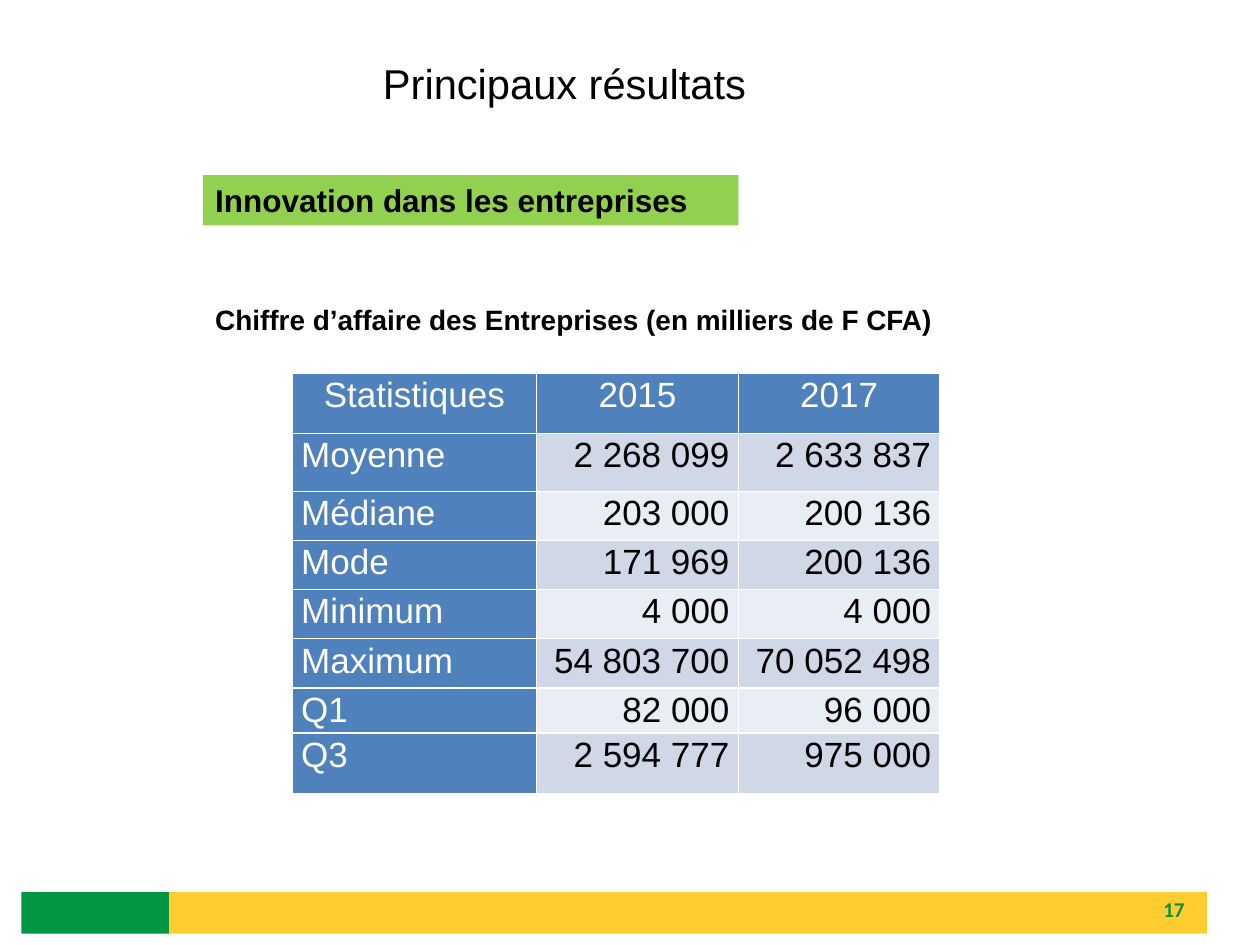
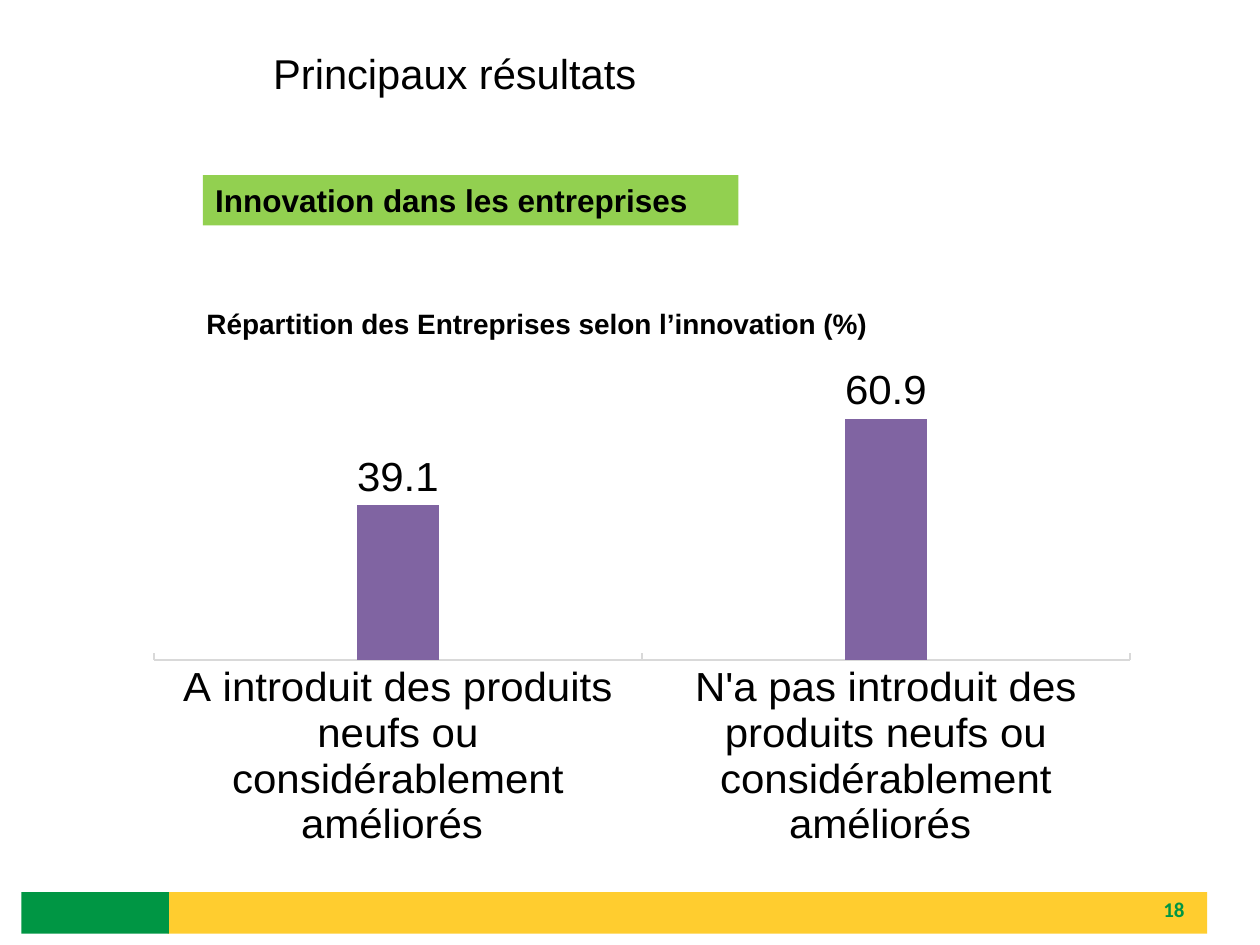
"""Build two result slides: a turnover table and an innovation column chart."""
from dataclasses import dataclass

from lxml import etree
from pptx import Presentation
from pptx import util as u
from pptx.chart import data as chart_data
from pptx.dml.color import RGBColor
from pptx.enum import chart as chart_enum, shapes, text
from pptx.oxml import ns


@dataclass(frozen=True)
class Theme:
    black: str = "000000"
    white: str = "FFFFFF"
    yellow: str = "FFCD2F"
    green: str = "009644"
    lime: str = "92D050"
    blue: str = "4F81BD"
    stripes: tuple = ("D0D8E8", "E9EDF4")
    purple: str = "8064A2"
    axis: str = "D9D9D9"
    font: str = "Arial"
    number_font: str = "Calibri"
    title_size: float = 23.8
    band_size: float = 18
    caption_size: float = 16
    table_size: float = 20
    chart_size: float = 24
    number_size: float = 12


theme = Theme()
presentation = Presentation()
presentation.slide_width, presentation.slide_height = u.Inches(10), u.Inches(7.5)
COLUMN = presentation.slide_width / 100
ROW = presentation.slide_height / 75


def place(column, row, columns, rows):
    """Turn grid cells into left, top, width and height."""
    return [round(length) for length in
            (column * COLUMN, row * ROW, columns * COLUMN, rows * ROW)]


def write(frame, words, size, color=theme.black, bold=False, align=text.PP_ALIGN.LEFT,
          font=theme.font, anchor=text.MSO_ANCHOR.TOP):
    """Fill a text frame with one formatted paragraph and return it."""
    frame.text = words
    frame.word_wrap = True
    frame.vertical_anchor = anchor
    paragraph = frame.paragraphs[0]
    paragraph.alignment = align
    for run in paragraph.runs:
        run.font.name, run.font.size, run.font.bold = font, u.Pt(size), bold
        run.font.color.rgb = RGBColor.from_string(color)
    return paragraph


left, center, right = text.PP_ALIGN.LEFT, text.PP_ALIGN.CENTER, text.PP_ALIGN.RIGHT
pages = [
    (17, "Principaux résultats ", (20, 5.2, 50.5, 3.9), center,
     "Chiffre d’affaire des Entreprises (en milliers de F CFA)", (16.1, 23.3, 77.2, 3.9)),
    (18, "Principaux résultats", (20.7, 4.4, 50.5, 3.9), left,
     "Répartition des Entreprises selon l’innovation (%)", (15.4, 23.3, 54.9, 4.2)),
]
bands = [
    ((13.3, 70.8, 82.5, 3.3), theme.yellow, ""),
    ((1.7, 70.8, 11.7, 3.3), theme.green, ""),
    ((16.1, 13.9, 42.5, 4), theme.lime, "Innovation dans les entreprises"),
]

for number, title, title_area, title_align, caption, caption_area in pages:
    slide = presentation.slides.add_slide(presentation.slide_layouts[6])

    for area, color, words in bands:
        shape = slide.shapes.add_shape(shapes.MSO_SHAPE.RECTANGLE, *place(*area))
        shape.shadow.inherit = False
        shape.fill.solid()
        shape.fill.fore_color.rgb = RGBColor.from_string(color)
        shape.line.fill.background()
        if words:
            write(shape.text_frame, words, theme.band_size, bold=True)
            shape.text_frame.auto_size = text.MSO_AUTO_SIZE.SHAPE_TO_FIT_TEXT

    number_box = slide.shapes.add_textbox(*place(71.7, 70.8, 23.3, 2.7))
    write(number_box.text_frame, str(number), theme.number_size, theme.green, True,
          right, theme.number_font, text.MSO_ANCHOR.MIDDLE)

    title_box = slide.shapes.add_textbox(*place(*title_area))
    paragraph = write(title_box.text_frame, title, theme.title_size, align=title_align)
    paragraph.line_spacing = 0.7
    indent = round(3.8 * COLUMN)
    properties = paragraph._p.get_or_add_pPr()
    properties.set("marL", str(indent))
    properties.set("indent", str(-indent))

    caption_box = slide.shapes.add_textbox(*place(*caption_area))
    write(caption_box.text_frame, caption, theme.caption_size, bold=True,
          anchor=text.MSO_ANCHOR.BOTTOM)

table_slide, chart_slide = presentation.slides

statistics = [
    ("Statistiques", "2015", "2017"),
    ("Moyenne", "2 268 099", "2 633 837"),
    ("Médiane", "203 000", "200 136"),
    ("Mode", "171 969", "200 136"),
    ("Minimum", "4 000", "4 000"),
    ("Maximum", "54 803 700", "70 052 498"),
    ("Q1", "82 000", "96 000"),
    ("Q3", "2 594 777", "975 000"),
]
table = table_slide.shapes.add_table(
    len(statistics), 3, *place(23.2, 29.6, 51.4, 33.5)).table
for column, width in zip(table.columns, (19.4, 16, 16)):
    column.width = round(width * COLUMN)
for row, height in zip(table.rows, (4.8, 4.6, 3.9, 3.9, 3.9, 3.9, 3.1, 4.8)):
    row.height = round(height * ROW)
for row_index, values in enumerate(statistics):
    for column_index, value in enumerate(values):
        cell = table.cell(row_index, column_index)
        heading = row_index == 0 or column_index == 0
        align = center if row_index == 0 else right if column_index else left
        cell.margin_left = cell.margin_right = round(0.7 * COLUMN)
        cell.margin_top = cell.margin_bottom = 0
        cell.fill.solid()
        cell.fill.fore_color.rgb = RGBColor.from_string(
            theme.blue if heading else theme.stripes[(row_index - 1) % 2])
        paragraph = write(cell.text_frame, value, theme.table_size,
                          theme.white if heading else theme.black, align=align)
        paragraph.line_spacing = 1.07

innovation = chart_data.CategoryChartData(number_format="###0.0")
innovation.categories = [
    "A introduit des produits neufs ou considérablement améliorés ",
    "N'a pas introduit des produits neufs ou considérablement améliorés ",
]
innovation.add_series("Series 1", (39.1, 60.9))
chart = chart_slide.shapes.add_chart(
    chart_enum.XL_CHART_TYPE.COLUMN_CLUSTERED, *place(10.6, 28.1, 80.7, 39.2),
    innovation).chart
chart.has_legend = chart.has_title = False
chart.font.name, chart.font.size = theme.font, u.Pt(theme.chart_size)
chart.font.color.rgb = RGBColor.from_string(theme.black)

category_axis, value_axis = chart.category_axis, chart.value_axis
category_axis.major_tick_mark = chart_enum.XL_TICK_MARK.INSIDE
category_axis.format.line.color.rgb = RGBColor.from_string(theme.axis)
category_axis.format.line.width = u.Pt(0.75)
value_axis.visible = value_axis.has_major_gridlines = False
value_axis.minimum_scale, value_axis.maximum_scale = 0, 70

plot = chart.plots[0]
plot.vary_by_categories = False
plot.gap_width, plot.overlap = 500, -27
plot.series[0].format.fill.solid()
plot.series[0].format.fill.fore_color.rgb = RGBColor.from_string(theme.purple)
plot.has_data_labels = True
labels = plot.data_labels
labels.show_value = True
labels.number_format, labels.number_format_is_linked = "###0.0", False
labels.position = chart_enum.XL_LABEL_POSITION.OUTSIDE_END

plot_area = chart._chartSpace.find(".//" + ns.qn("c:plotArea"))
for layout in plot_area.findall(ns.qn("c:layout")):
    plot_area.remove(layout)
layout = etree.Element(ns.qn("c:layout"))
manual = etree.SubElement(layout, ns.qn("c:manualLayout"))
for tag, value in (("layoutTarget", "inner"), ("xMode", "edge"), ("yMode", "edge"),
                   ("x", 0.02), ("y", 0.06), ("w", 0.96), ("h", 0.58)):
    etree.SubElement(manual, ns.qn("c:" + tag)).set("val", str(value))
plot_area.insert(0, layout)

presentation.save("out.pptx")
